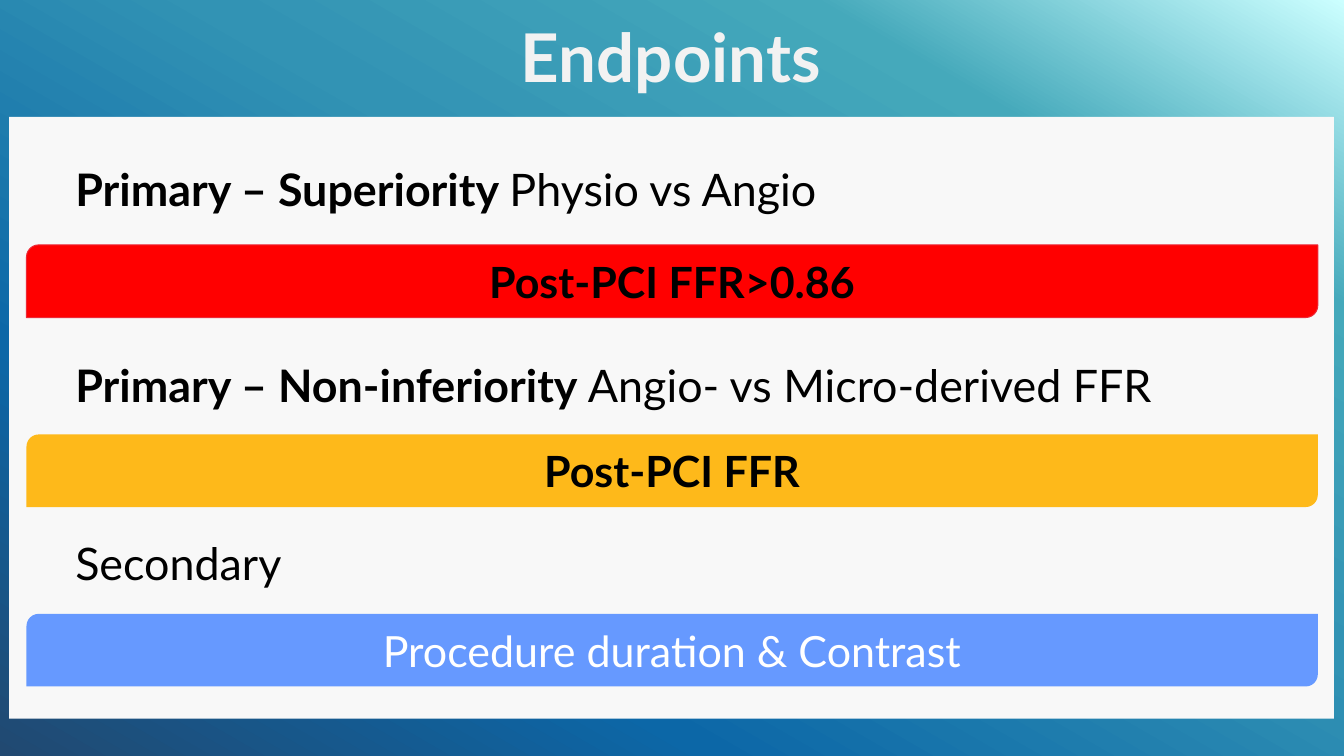
from copy import deepcopy

from pptx import Presentation
from pptx import util as u
from pptx.dml import color
from pptx.enum import shapes, text

COLORS = {
    "panel": "F8F8F8", "title": "F2F2F2", "ink": "000000", "white": "FFFFFF",
    "red": "FF0000", "red_edge": "ED2937", "amber": "FEB91A", "blue": "6699FF",
}
BACKDROP = [(0, "214971"), (0.27, "0C67A7"), (0.57, "3293B4"),
            (0.8, "45A9BB"), (1, "CCFFFF")]
ENDPOINTS = [
    (19.87, "Primary – Superiority ", "Physio vs Angio",
     32.4, "Post-PCI FFR>0.86", "red", "red_edge", "ink", True),
    (45.73, "Primary – Non-inferiority ", "Angio- vs Micro-derived FFR",
     57.47, "Post-PCI FFR", "amber", None, "ink", True),
    (69.33, "", "Secondary",
     81.2, "Procedure duration & Contrast", "blue", None, "white", False),
]


class EndpointSlide:
    """Hold the style and current slide; lengths are percent of slide size."""

    def __init__(self, deck):
        """Add a blank page to the deck."""
        self.width, self.height = deck.slide_width, deck.slide_height
        self.page = deck.slides.add_slide(deck.slide_layouts[6])

    def place(self, left, top, width, height):
        """Turn percentages into slide lengths."""
        return [round(share * size / 100) for share, size in
                zip((left, top, width, height), (self.width, self.height) * 2)]

    def backdrop(self, stops, angle):
        """Fill the page with a linear gradient."""
        fill = self.page.background.fill
        fill.gradient()
        fill.gradient_angle = angle
        stop_list = self.page.element.xpath(".//a:gsLst")[0]
        while len(stop_list) < len(stops):
            stop_list.append(deepcopy(stop_list[0]))
        for stop, (position, shade) in zip(fill.gradient_stops, stops):
            stop.position = position
            stop.color.rgb = color.RGBColor.from_string(shade)

    def shape(self, kind, area, fill=None, line=None):
        """Add a preset shape with optional fill and outline."""
        box = self.page.shapes.add_shape(kind, *self.place(*area))
        box.shadow.inherit = False
        for part, name in ((box.fill, fill), (box.line.fill, line)):
            if name:
                part.solid()
                part.fore_color.rgb = color.RGBColor.from_string(COLORS[name])
            else:
                part.background()
        if line:
            box.line.width = u.Pt(0.75)
        return box

    def label(self, box, spans, size, shade, align, insets=(0.13, 0.07)):
        """Put one paragraph of (words, bold) spans into a box."""
        frame = box.text_frame
        side, edge = map(u.Inches, insets)
        settings = {"word_wrap": True, "vertical_anchor": text.MSO_ANCHOR.MIDDLE,
                    "margin_left": side, "margin_right": side,
                    "margin_top": edge, "margin_bottom": edge}
        for name, value in settings.items():
            setattr(frame, name, value)
        para = frame.paragraphs[0]
        para.alignment = align
        for words, bold in spans:
            span = para.add_run()
            span.text = words
            style = {"name": "Lato", "size": u.Pt(size), "bold": bold}
            for name, value in style.items():
                setattr(span.font, name, value)
            span.font.color.rgb = color.RGBColor.from_string(COLORS[shade])
        return para

    def title(self, words):
        """Add the centred slide title."""
        box = self.page.shapes.add_textbox(*self.place(0, 0.4, 99.83, 15.2))
        para = self.label(box, [(words, True)], 48, "title",
                          text.PP_ALIGN.CENTER, (0.1, 0.05))
        para.line_spacing = 0.9

    def heading(self, top, lead, rest):
        """Add a heading with a bold lead."""
        box = self.shape(shapes.MSO_SHAPE.ROUND_2_DIAG_RECTANGLE,
                         (4.35, top, 92.1, 10.27))
        spans = [span for span in ((lead, True), (rest, False)) if span[0]]
        self.label(box, spans, 32, "ink", text.PP_ALIGN.LEFT)

    def bar(self, top, words, fill, line, shade, bold):
        """Add a coloured bar naming an endpoint."""
        box = self.shape(shapes.MSO_SHAPE.ROUND_2_DIAG_RECTANGLE,
                         (1.97, top, 96.08, 9.6), fill, line)
        para = self.label(box, [(words, bold)], 30.7, shade,
                          text.PP_ALIGN.CENTER)
        hang = u.Inches(0.37)
        properties = para._p.get_or_add_pPr()
        properties.set("marL", str(hang))
        properties.set("indent", str(-hang))


def main():
    """Build and save the slide."""
    deck = Presentation()
    deck.slide_width, deck.slide_height = u.Inches(13.33), u.Inches(7.5)
    slide = EndpointSlide(deck)
    slide.backdrop(BACKDROP, 60)
    slide.shape(shapes.MSO_SHAPE.RECTANGLE, (0.68, 15.47, 98.57, 79.6), "panel")
    slide.title("Endpoints")
    for top, lead, rest, bar_top, *bar in ENDPOINTS:
        slide.heading(top, lead, rest)
        slide.bar(bar_top, *bar)
    deck.save("out.pptx")


if __name__ == "__main__":
    main()
